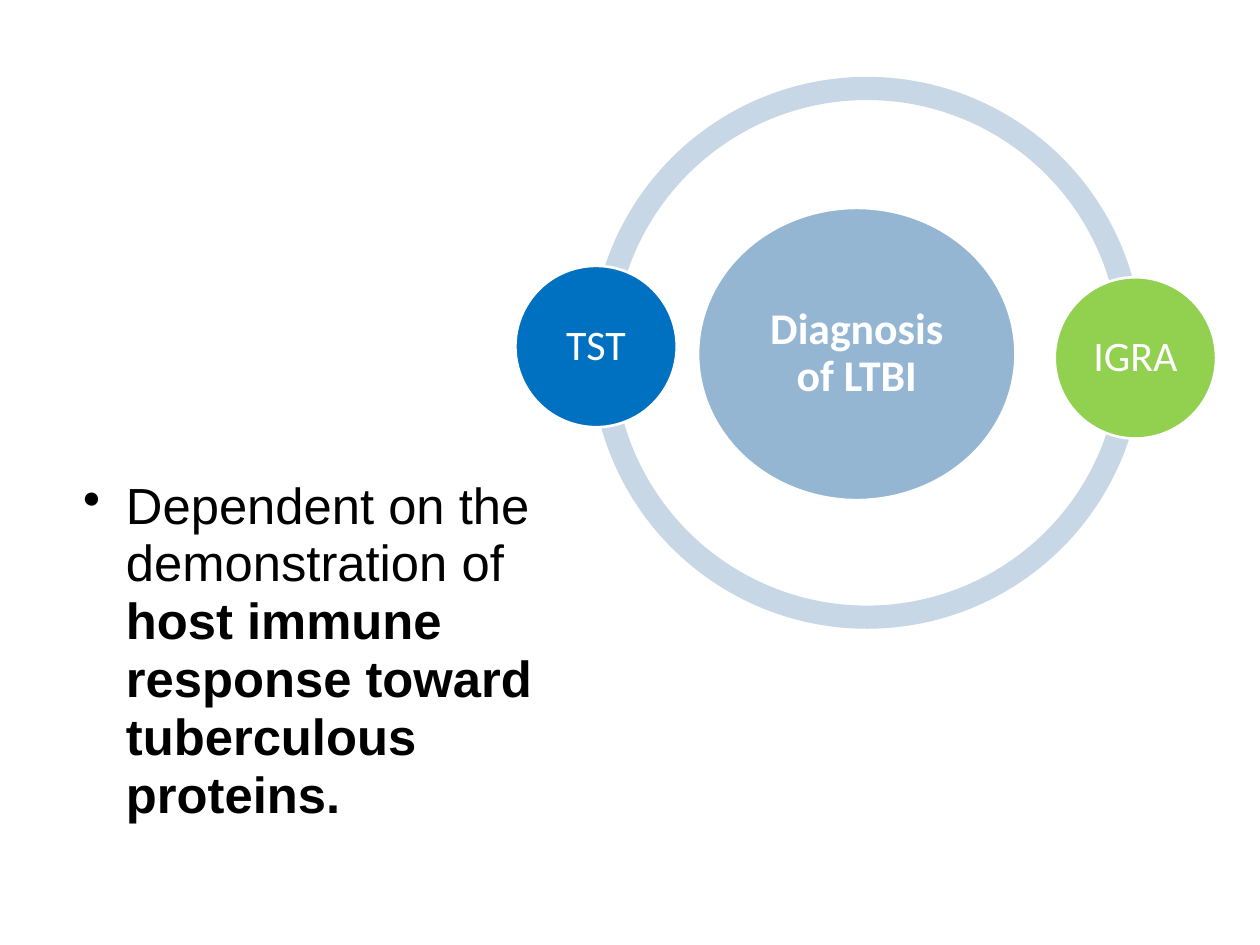
from lxml.etree import SubElement
from pptx import Presentation
from pptx.dml.color import RGBColor
from pptx.enum.shapes import MSO_SHAPE
from pptx.enum.text import MSO_ANCHOR, PP_ALIGN
from pptx.oxml.ns import qn
from pptx.util import Pt


def paint(color_format, color):
    """Set a fill or font colour from a hex string."""
    color_format.rgb = RGBColor.from_string(color)


def fill_shape(shape, color):
    """Give a shape a flat fill without shadow."""
    shape.shadow.inherit = False
    shape.fill.solid()
    paint(shape.fill.fore_color, color)


def set_margins(frame, horizontal, vertical):
    """Set equal opposite margins on a wrapping text frame."""
    frame.word_wrap = True
    frame.margin_left = frame.margin_right = Pt(horizontal)
    frame.margin_top = frame.margin_bottom = Pt(vertical)


def add_ring_half(slide, left, top, size, start, end):
    """Draw one half of the ring that links the two tests."""
    half = slide.shapes.add_shape(
        MSO_SHAPE.BLOCK_ARC, Pt(left), Pt(top), Pt(size), Pt(size))
    for index, value in enumerate((start, end, 0.042)):
        half.adjustments[index] = value
    fill_shape(half, "C8D7E5")
    half.line.fill.background()


def add_node(slide, left, top, width, height, label, color, size, bold=False):
    """Draw a labelled ellipse with a white outline."""
    node = slide.shapes.add_shape(
        MSO_SHAPE.OVAL, Pt(left), Pt(top), Pt(width), Pt(height))
    fill_shape(node, color)
    paint(node.line.color, "FFFFFF")
    node.line.width = Pt(1.5)
    frame = node.text_frame
    set_margins(frame, 2, 2)
    frame.vertical_anchor = MSO_ANCHOR.MIDDLE
    paragraph = frame.paragraphs[0]
    paragraph.text = label
    paragraph.alignment = PP_ALIGN.CENTER
    paragraph.line_spacing = 0.9
    font = paragraph.font
    font.name, font.size, font.bold = "Calibri", Pt(size), bold
    paint(font.color, "FFFFFF")


def add_diagnosis_diagram(slide, left, top):
    """Draw the ring, the diagnosis at its centre and the test on each side."""
    ring_left, ring_size, test_size = left + 43.2, 315.4, 92.2
    first, second = 0.701, 108.701
    add_ring_half(slide, ring_left, top, ring_size, first, second)
    add_ring_half(slide, ring_left, top, ring_size, second, first)
    add_node(slide, left + 104.4, top + 74.9, 181.4, 167,
             "Diagnosis of LTBI", "94B6D2", 25, bold=True)
    tests = (("TST", "0070C0", 0, 108), ("IGRA", "92D050", 308.2, 114.5))
    for label, color, across, down in tests:
        add_node(slide, left + across, top + down, test_size, test_size,
                 label, color, 24)


def add_explanation(slide, left, top, width, height):
    """Write the bulleted explanation of the tests."""
    frame = slide.shapes.add_textbox(
        Pt(left), Pt(top), Pt(width), Pt(height)).text_frame
    set_margins(frame, 6.5, 3)
    paragraph = frame.paragraphs[0]
    paragraph.line_spacing = 0.95
    font = paragraph.font
    font.name, font.size = "Arial", Pt(29)
    paint(font.color, "000000")
    properties = paragraph._p.get_or_add_pPr()
    properties.set("marL", str(Pt(24.5)))
    properties.set("indent", str(-Pt(24.5)))
    bullet = SubElement(properties, qn("a:buChar"), char="•")
    properties.find(qn("a:defRPr")).addprevious(bullet)
    paragraph.add_run().text = "Dependent on the demonstration of "
    emphasis = paragraph.add_run()
    emphasis.text = "host immune response toward tuberculous proteins."
    emphasis.font.bold = True


def main():
    """Build and save the slide."""
    presentation = Presentation()
    presentation.slide_width, presentation.slide_height = Pt(720), Pt(540)
    slide = presentation.slides.add_slide(presentation.slide_layouts[6])
    add_diagnosis_diagram(slide, 294.5, 43.9)
    add_explanation(slide, 41, 270, 296.6, 205.2)
    presentation.save("out.pptx")


if __name__ == "__main__":
    main()
